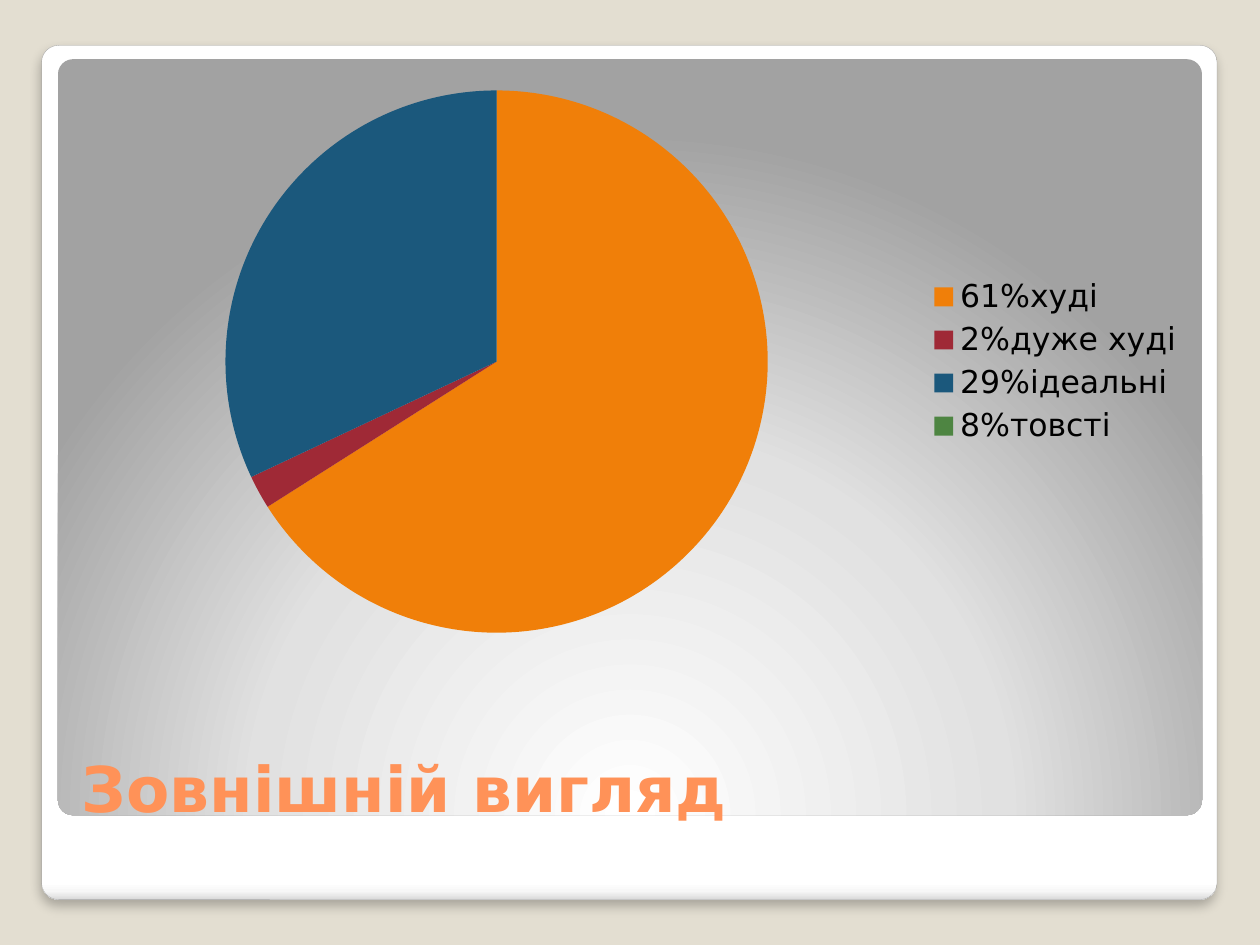
from lxml import etree
from pptx import Presentation
from pptx.chart.data import CategoryChartData
from pptx.dml.color import RGBColor
from pptx.enum.chart import XL_CHART_TYPE, XL_LEGEND_POSITION
from pptx.enum.shapes import MSO_SHAPE
from pptx.enum.text import MSO_ANCHOR, PP_ALIGN
from pptx.oxml import parse_xml
from pptx.oxml.ns import nsdecls, qn
from pptx.util import Inches, Pt

PIE = XL_CHART_TYPE.PIE
LEGEND_RIGHT = XL_LEGEND_POSITION.RIGHT
ROUNDED = MSO_SHAPE.ROUNDED_RECTANGLE
BOTTOM = MSO_ANCHOR.BOTTOM
LEFT = PP_ALIGN.LEFT
TITLE_ONLY = 5

# Content
TITLE = "Зовнішній вигляд"
SERIES_NAME = "Series 1"
SLICES = [
    ("61%худі", 66, "F07F09"),
    ("2%дуже худі", 2, "9F2936"),
    ("29%ідеальні", 32, "1B587C"),
    ("8%товсті", None, "4E8542"),
]

THEME = {
    "font": "DejaVu Sans",
    "background": "E3DED1",
    "title": "FF9258",
    "text": "000000",
    "frame_line": "A4A4A4",
    "shadow": "000000",
    "title_size": 36,
    "chart_size": 18,
    "frame_stops": [(0, "FFFFFF"), (98, "FFFFFF"), (99, "F7F7F7"), (100, "DADADA")],
    "panel_stops": [(0, "FFFFFF"), (55, "E1E1E1"), (100, "A2A2A2")],
}
DOWNWARD = '<a:lin ang="5400000" scaled="0"/>'
FROM_BELOW = ('<a:path path="circle"><a:fillToRect l="50000" t="175000" '
              'r="50000" b="-75000"/></a:path>')

# Layout: left, top, width, height
FRAME_BOX = (0.33, 0.36, 9.33, 6.78)
PANEL_BOX = (0.46, 0.47, 9.08, 6)
TITLE_BOX = (0.55, 5.45, 8.95, 1.15)
CHART_BOX = (0.55, 0.58, 8.95, 4.58)


def color(name):
    return RGBColor.from_string(THEME[name])


def style_font(font, size, color_name, bold=False):
    font.name = THEME["font"]
    font.size = Pt(THEME[size])
    font.bold = bold
    font.color.rgb = color(color_name)


def add_panel(slide, box, stops, direction):
    shape = slide.shapes.add_shape(ROUNDED, *map(Inches, box))
    shape.adjustments[0] = 0.02
    shape.shadow.inherit = False
    shape.line.fill.background()
    shape.fill.gradient()
    stop_xml = "".join(
        f'<a:gs pos="{position * 1000}"><a:srgbClr val="{value}"/></a:gs>'
        for position, value in stops)
    gradient = parse_xml(f'<a:gradFill {nsdecls("a")} rotWithShape="1">'
                         f'<a:gsLst>{stop_xml}</a:gsLst>{direction}</a:gradFill>')
    properties = shape._element.spPr
    properties.replace(properties.find(qn("a:gradFill")), gradient)
    return shape


def add_shadow(shape):
    effects = shape._element.spPr.find(qn("a:effectLst"))
    shadow = etree.SubElement(effects, qn("a:outerShdw"), blurRad=str(Pt(6)),
                              dist=str(Pt(4)), dir="5400000", rotWithShape="0")
    shade = etree.SubElement(shadow, qn("a:srgbClr"), val=THEME["shadow"])
    etree.SubElement(shade, qn("a:alpha"), val="25000")


def place_title(slide):
    title = slide.shapes.title
    title.left, title.top, title.width, title.height = map(Inches, TITLE_BOX)
    frame = title.text_frame
    frame.vertical_anchor = BOTTOM
    frame.word_wrap = True
    paragraph = frame.paragraphs[0]
    paragraph.alignment = LEFT
    run = paragraph.add_run()
    run.text = TITLE
    style_font(run.font, "title_size", "title", bold=True)
    # Bring the title in front of the panels
    slide.shapes._spTree.append(title._element)


def add_pie(slide):
    data = CategoryChartData()
    data.categories = [label for label, _, _ in SLICES]
    data.add_series(SERIES_NAME, [value for _, value, _ in SLICES])
    chart = slide.shapes.add_chart(PIE, *map(Inches, CHART_BOX), data).chart
    chart.has_title = False
    style_font(chart.font, "chart_size", "text")
    chart.has_legend = True
    chart.legend.position = LEGEND_RIGHT
    chart.legend.include_in_layout = False
    plot = chart.plots[0]
    plot.vary_by_categories = True
    for index, (_, _, value) in enumerate(SLICES):
        point_format = plot.series[0].points[index].format
        point_format.fill.solid()
        point_format.fill.fore_color.rgb = RGBColor.from_string(value)
        point_format.line.fill.background()


def main():
    presentation = Presentation()
    presentation.slide_width, presentation.slide_height = Inches(10), Inches(7.5)
    slide = presentation.slides.add_slide(presentation.slide_layouts[TITLE_ONLY])
    slide.background.fill.solid()
    slide.background.fill.fore_color.rgb = color("background")

    # White frame and shaded panel
    frame = add_panel(slide, FRAME_BOX, THEME["frame_stops"], DOWNWARD)
    frame.line.color.rgb = color("frame_line")
    frame.line.width = Pt(0.16)
    add_shadow(frame)
    add_panel(slide, PANEL_BOX, THEME["panel_stops"], FROM_BELOW)

    # Title and chart
    place_title(slide)
    add_pie(slide)
    presentation.save("out.pptx")


if __name__ == "__main__":
    main()
